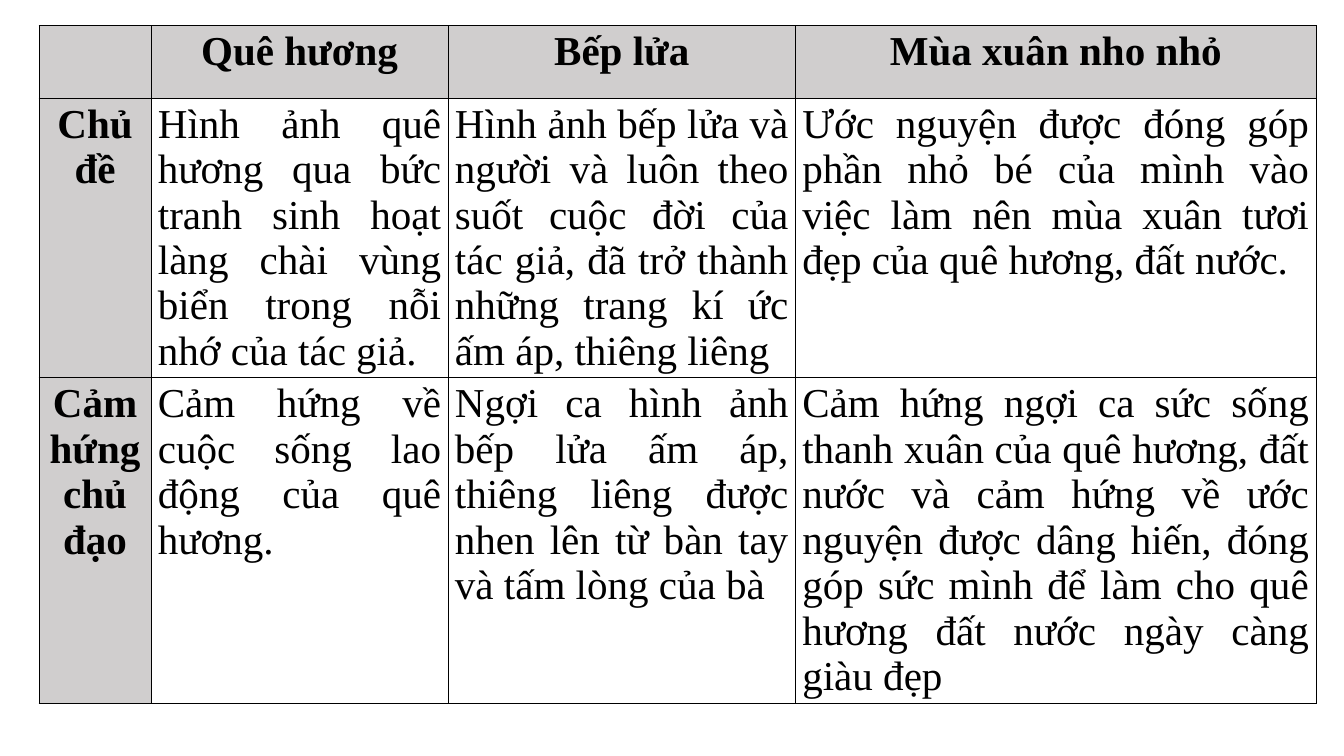
from dataclasses import dataclass

from lxml import etree
from pptx import Presentation
from pptx.dml.color import RGBColor
from pptx.enum.text import PP_ALIGN
from pptx.oxml.ns import qn
from pptx.util import Inches, Pt

CENTER, JUSTIFY = PP_ALIGN.CENTER, PP_ALIGN.JUSTIFY
BLANK = 6

COLS = [1.67, 4.42, 5.17, 7.75]
ROWS = [1.08, 4.15, 4.84]
POEMS = [
    ["", "Quê hương", "Bếp lửa", "Mùa xuân nho nhỏ"],
    [
        "Chủ đề",
        "Hình ảnh quê hương qua bức tranh sinh hoạt làng chài vùng biển "
        "trong nỗi nhớ của tác giả.",
        "Hình ảnh bếp lửa và người và luôn theo suốt cuộc đời của tác giả, "
        "đã trở thành những trang kí ức ấm áp, thiêng liêng",
        "Ước nguyện được đóng góp phần nhỏ bé của mình vào việc làm nên "
        "mùa xuân tươi đẹp của quê hương, đất nước.",
    ],
    [
        "Cảm hứng chủ đạo",
        "Cảm hứng về cuộc sống lao động của quê hương.",
        "Ngợi ca hình ảnh bếp lửa ấm áp, thiêng liêng được nhen lên từ "
        "bàn tay và tấm lòng của bà",
        "Cảm hứng ngợi ca sức sống thanh xuân của quê hương, đất nước và "
        "cảm hứng về ước nguyện được dâng hiến, đóng góp sức mình để làm "
        "cho quê hương đất nước ngày càng giàu đẹp",
    ],
]


@dataclass
class Theme:
    font: str = "Times New Roman"
    size: int = 44
    ink: str = "000000"
    head: str = "D0CECE"
    body: str = "FFFFFF"
    line: int = 1


class Deck:
    """Holds the theme and the slide being built."""

    def __init__(self, theme, slide):
        self.theme = theme
        self.slide = slide

    def table(self, left, top, cols, rows, texts):
        frame = self.slide.shapes.add_table(
            len(rows), len(cols), Inches(left), Inches(top),
            Inches(sum(cols)), Inches(sum(rows)))
        grid = frame.table
        grid.first_row = grid.horz_banding = False
        for col, width in zip(grid.columns, cols):
            col.width = Inches(width)
        for row, height in zip(grid.rows, rows):
            row.height = Inches(height)
        for r, line in enumerate(texts):
            for c, text in enumerate(line):
                self.cell(grid.cell(r, c), text, r == 0 or c == 0)

    def cell(self, cell, text, head):
        theme = self.theme
        self.border(cell)
        cell.fill.solid()
        cell.fill.fore_color.rgb = RGBColor.from_string(
            theme.head if head else theme.body)
        cell.text_frame.text = text
        para = cell.text_frame.paragraphs[0]
        para.alignment = CENTER if head else JUSTIFY
        font = para.font
        font.name, font.size, font.bold = theme.font, Pt(theme.size), head
        font.color.rgb = RGBColor.from_string(theme.ink)
        for run in para.runs:
            run.font.name, run.font.size = theme.font, Pt(theme.size)
            run.font.bold = head
            run.font.color.rgb = RGBColor.from_string(theme.ink)

    def border(self, cell):
        """Line all four sides; must come before the cell's fill."""
        props = cell._tc.get_or_add_tcPr()
        for side in ("a:lnL", "a:lnR", "a:lnT", "a:lnB"):
            line = etree.SubElement(
                props, qn(side), w=str(Pt(self.theme.line)))
            fill = etree.SubElement(line, qn("a:solidFill"))
            etree.SubElement(fill, qn("a:srgbClr"), val=self.theme.ink)


def main():
    show = Presentation()
    show.slide_width, show.slide_height = Inches(20), Inches(11.25)
    slide = show.slides.add_slide(show.slide_layouts[BLANK])
    Deck(Theme(), slide).table(0.58, 0.38, COLS, ROWS, POEMS)
    show.save("out.pptx")


if __name__ == "__main__":
    main()
